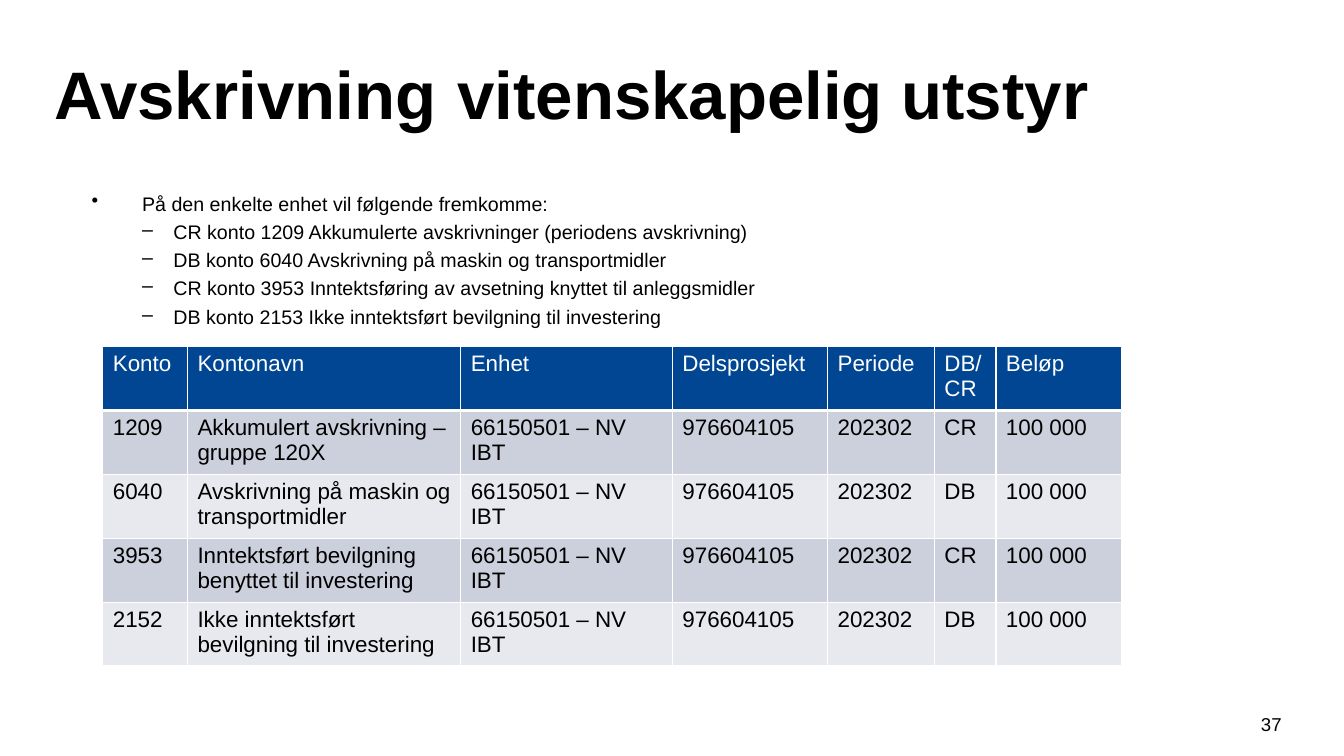
"""Build a slide on depreciation of scientific equipment with bullets and a posting table."""

import dataclasses

import lxml.etree
import pptx
import pptx.dml.color
import pptx.enum.text
import pptx.oxml.ns
import pptx.util

SLIDE_WIDTH = pptx.util.Inches(13.33)
SLIDE_HEIGHT = pptx.util.Inches(7.5)
FONT = "Arial"
BLACK = "000000"
WHITE = "FFFFFF"
HEADER_FILL = "014693"
BAND_FILLS = ("CCCFDC", "E7E9EE")


@dataclasses.dataclass(frozen=True)
class Area:
    left: float
    top: float
    width: float
    height: float


@dataclasses.dataclass(frozen=True)
class Bullet:
    text: str
    level: int = 1


@dataclasses.dataclass(frozen=True)
class BulletStyle:
    mark: str
    margin: float
    hanging: float


@dataclasses.dataclass(frozen=True)
class Column:
    heading: str
    width: float


@dataclasses.dataclass(frozen=True)
class Posting:
    account: str
    name: str
    side: str

    def values(self) -> tuple[str, ...]:
        return (self.account, self.name, "66150501 – NV IBT", "976604105",
                "202302", self.side, "100 000")


NUMBER_AREA = Area(92.72, 93.6, 3.75, 5.33)
TITLE_AREA = Area(3.3, 5.87, 92.12, 12.67)
BODY_AREA = Area(6.08, 24.67, 86.27, 63.47)
TABLE_LEFT, TABLE_TOP, ROW_HEIGHT = 7.65, 45.87, 7.9

BULLET_STYLES = (BulletStyle("•", 3.75, 3.75), BulletStyle("–", 6.08, 2.33))
BULLETS = (
    Bullet("På den enkelte enhet vil følgende fremkomme:", 0),
    Bullet("CR konto 1209 Akkumulerte avskrivninger (periodens avskrivning)"),
    Bullet("DB konto 6040 Avskrivning på maskin og transportmidler"),
    Bullet("CR konto 3953 Inntektsføring av avsetning knyttet til anleggsmidler"),
    Bullet("DB konto 2153 Ikke inntektsført bevilgning til investering"),
)
COLUMNS = (
    Column("Konto", 6.3),
    Column("Kontonavn", 20.33),
    Column("Enhet", 15.75),
    Column("Delsprosjekt", 11.55),
    Column("Periode", 7.95),
    Column("DB/CR", 4.58),
    Column("Beløp", 9.38),
)
POSTINGS = (
    Posting("1209", "Akkumulert avskrivning – gruppe 120X", "CR"),
    Posting("6040", "Avskrivning på maskin og transportmidler", "DB"),
    Posting("3953", "Inntektsført bevilgning benyttet til investering", "CR"),
    Posting("2152", "Ikke inntektsført bevilgning til investering", "DB"),
)


def across(percent: float) -> int:
    return round(SLIDE_WIDTH * percent / 100)


def down(percent: float) -> int:
    return round(SLIDE_HEIGHT * percent / 100)


def colour(value: str) -> pptx.dml.color.RGBColor:
    return pptx.dml.color.RGBColor.from_string(value)


def write(paragraph, text: str, size: float, text_colour: str = BLACK, bold: bool = False) -> None:
    paragraph.text = text
    for run in paragraph.runs:
        run.font.name = FONT
        run.font.size = pptx.util.Pt(size)
        run.font.bold = bold
        run.font.color.rgb = colour(text_colour)


def add_text_frame(slide, area: Area):
    shape = slide.shapes.add_textbox(
        across(area.left), down(area.top), across(area.width), down(area.height))
    shape.text_frame.word_wrap = True
    return shape.text_frame


def set_bullet(paragraph, style: BulletStyle) -> None:
    properties = paragraph._p.get_or_add_pPr()
    properties.set("marL", str(across(style.margin)))
    properties.set("indent", str(-across(style.hanging)))
    mark = lxml.etree.SubElement(properties, pptx.oxml.ns.qn("a:buChar"))
    mark.set("char", style.mark)


def add_bullets(slide) -> None:
    text_frame = add_text_frame(slide, BODY_AREA)
    for index, bullet in enumerate(BULLETS):
        paragraph = text_frame.add_paragraph() if index else text_frame.paragraphs[0]
        paragraph.level = bullet.level
        set_bullet(paragraph, BULLET_STYLES[bullet.level])
        if index:
            paragraph.space_before = pptx.util.Pt(3.4)
        write(paragraph, bullet.text, 14)


def set_borders(cell, bottom_width: float) -> None:
    properties = cell._tc.get_or_add_tcPr()
    for side, width in (("L", 1), ("R", 1), ("T", 1), ("B", bottom_width)):
        line = lxml.etree.SubElement(properties, pptx.oxml.ns.qn(f"a:ln{side}"))
        line.set("w", str(pptx.util.Pt(width)))
        fill = lxml.etree.SubElement(line, pptx.oxml.ns.qn("a:solidFill"))
        lxml.etree.SubElement(fill, pptx.oxml.ns.qn("a:srgbClr")).set("val", WHITE)


def add_postings(slide) -> None:
    rows = [tuple(column.heading for column in COLUMNS)]
    rows += [posting.values() for posting in POSTINGS]
    table = slide.shapes.add_table(
        len(rows), len(COLUMNS), across(TABLE_LEFT), down(TABLE_TOP),
        across(sum(column.width for column in COLUMNS)), down(ROW_HEIGHT * len(rows))).table
    for table_column, column in zip(table.columns, COLUMNS):
        table_column.width = across(column.width)
    for row_index, values in enumerate(rows):
        is_header = row_index == 0
        table.rows[row_index].height = down(ROW_HEIGHT)
        fill = HEADER_FILL if is_header else BAND_FILLS[(row_index - 1) % 2]
        for column_index, value in enumerate(values):
            cell = table.cell(row_index, column_index)
            set_borders(cell, 3 if is_header else 1)
            cell.fill.solid()
            cell.fill.fore_color.rgb = colour(fill)
            write(cell.text_frame.paragraphs[0], value, 16, WHITE if is_header else BLACK)


def main() -> None:
    presentation = pptx.Presentation()
    presentation.slide_width = SLIDE_WIDTH
    presentation.slide_height = SLIDE_HEIGHT
    slide = presentation.slides.add_slide(presentation.slide_layouts[6])

    number = add_text_frame(slide, NUMBER_AREA).paragraphs[0]
    number.alignment = pptx.enum.text.PP_ALIGN.CENTER
    write(number, "37", 13.3)

    title_frame = add_text_frame(slide, TITLE_AREA)
    title_frame.vertical_anchor = pptx.enum.text.MSO_ANCHOR.MIDDLE
    write(title_frame.paragraphs[0], "Avskrivning\tvitenskapelig utstyr", 48, bold=True)

    add_bullets(slide)
    add_postings(slide)
    presentation.save("out.pptx")


if __name__ == "__main__":
    main()
